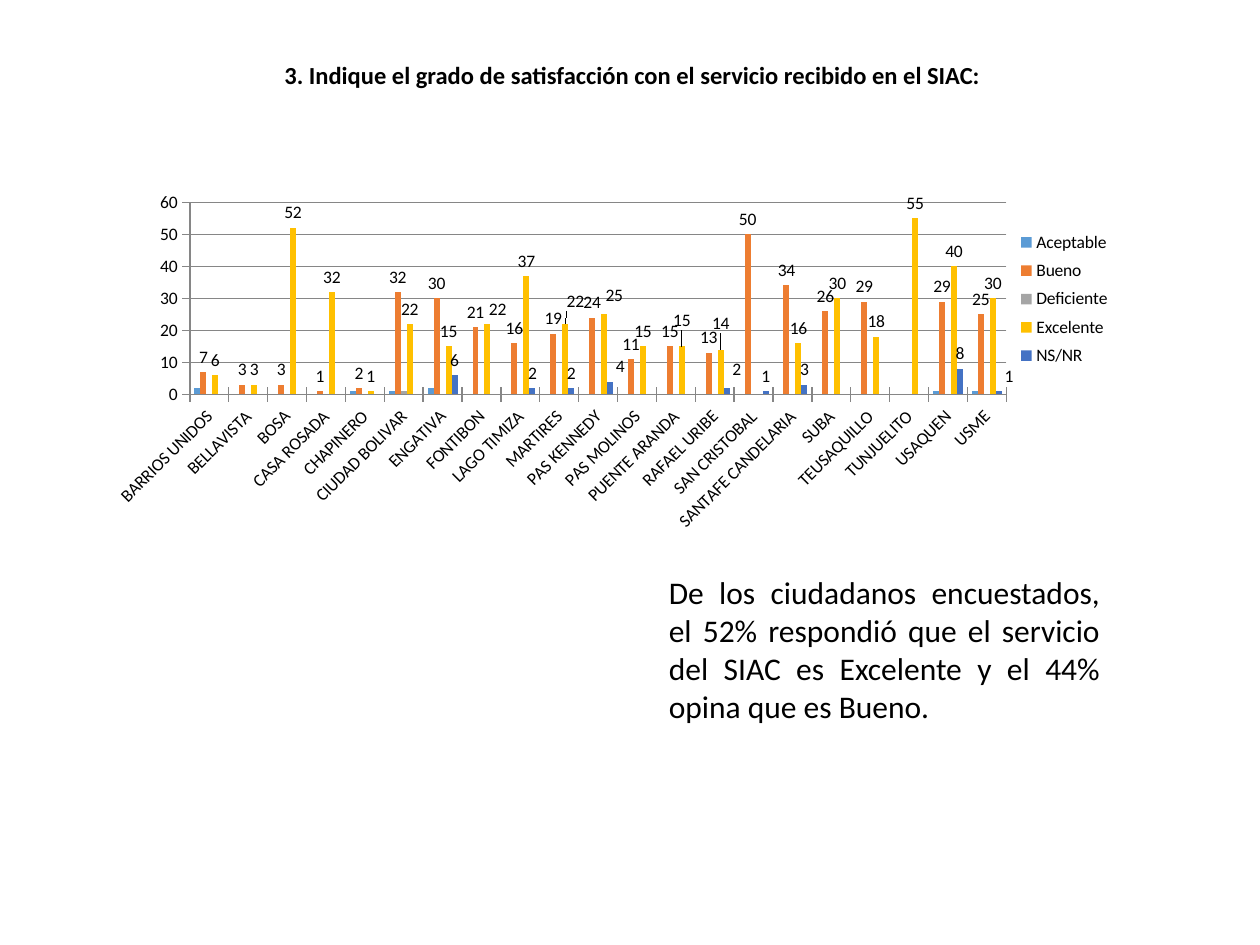
from lxml import etree
from pptx import Presentation
from pptx.chart.data import CategoryChartData
from pptx.dml.color import RGBColor
from pptx.enum.chart import XL_CHART_TYPE, XL_LABEL_POSITION, XL_LEGEND_POSITION, XL_TICK_MARK
from pptx.enum.text import MSO_ANCHOR, MSO_AUTO_SIZE, PP_ALIGN
from pptx.oxml.ns import qn
from pptx.util import Pt

PX = 9144  # 100 px to the inch
COLUMNS = XL_CHART_TYPE.COLUMN_CLUSTERED
OUTSIDE = XL_LABEL_POSITION.OUTSIDE_END
RIGHT = XL_LEGEND_POSITION.RIGHT
CROSS = XL_TICK_MARK.CROSS
COLORS = {
    "text": "000000", "grid": "868686",
    "Aceptable": "5B9BD5", "Bueno": "ED7D31", "Deficiente": "A5A5A5",
    "Excelente": "FFC000", "NS/NR": "4472C4",
}


def format_font(font, size, bold=False):
    for name, value in {"name": "Calibri", "size": Pt(size), "bold": bold}.items():
        setattr(font, name, value)
    font.color.rgb = RGBColor.from_string(COLORS["text"])


def set_layout(parent, index, values):
    for old in parent.findall(qn("c:layout")):
        parent.remove(old)
    layout = etree.Element(qn("c:layout"))
    manual = etree.SubElement(layout, qn("c:manualLayout"))
    for tag, value in values.items():
        etree.SubElement(manual, qn(f"c:{tag}")).set("val", str(value))
    parent.insert(index, layout)


presentation = Presentation()
presentation.slide_width = 1000 * PX
presentation.slide_height = 750 * PX
slide = presentation.slides.add_slide(presentation.slide_layouts[5])

# Title
title = slide.shapes.title
for name, value in {"left": 77, "top": 33, "width": 850, "height": 43}.items():
    setattr(title, name, value * PX)
frame = title.text_frame
frame.text = "3. Indique el grado de satisfacción con el servicio recibido en el SIAC:"
frame.auto_size = MSO_AUTO_SIZE.NONE
frame.vertical_anchor = MSO_ANCHOR.BOTTOM
paragraph = frame.paragraphs[0]
paragraph.alignment = PP_ALIGN.CENTER
paragraph.line_spacing = 0.9
format_font(paragraph.runs[0].font, 14, bold=True)

# Answers by location: one value for each series
series_names = ["Aceptable", "Bueno", "Deficiente", "Excelente", "NS/NR"]
answers = {
    "BARRIOS UNIDOS": (2, 7, None, 6, None),
    "BELLAVISTA": (None, 3, None, 3, None),
    "BOSA": (None, 3, None, 52, None),
    "CASA ROSADA": (None, 1, None, 32, None),
    "CHAPINERO": (1, 2, None, 1, None),
    "CIUDAD BOLIVAR": (1, 32, 1, 22, None),
    "ENGATIVA": (2, 30, None, 15, 6),
    "FONTIBON": (None, 21, None, 22, None),
    "LAGO TIMIZA": (None, 16, None, 37, 2),
    "MARTIRES": (None, 19, None, 22, 2),
    "PAS KENNEDY": (None, 24, None, 25, 4),
    "PAS MOLINOS": (None, 11, None, 15, None),
    "PUENTE ARANDA": (None, 15, None, 15, None),
    "RAFAEL URIBE": (None, 13, None, 14, 2),
    "SAN CRISTOBAL": (None, 50, None, None, 1),
    "SANTAFE CANDELARIA": (None, 34, None, 16, 3),
    "SUBA": (None, 26, None, 30, None),
    "TEUSAQUILLO": (None, 29, None, 18, None),
    "TUNJUELITO": (None, None, None, 55, None),
    "USAQUEN": (1, 29, None, 40, 8),
    "USME": (1, 25, None, 30, 1),
}
chart_data = CategoryChartData()
chart_data.categories = list(answers)
for name, values in zip(series_names, zip(*answers.values())):
    chart_data.add_series(name, values)
chart = slide.shapes.add_chart(
    COLUMNS, 83 * PX, 145 * PX, 806 * PX, 298 * PX, chart_data).chart
chart.has_title = False
format_font(chart.font, 10)
plot = chart.plots[0]
plot.gap_width = 150
plot.overlap = 0
plot.vary_by_categories = False

# Axes
category_axis, value_axis = chart.category_axis, chart.value_axis
value_axis.minimum_scale, value_axis.maximum_scale, value_axis.major_unit = 0, 60, 10
value_axis.has_major_gridlines = True
for axis in (category_axis, value_axis):
    axis.major_tick_mark = CROSS
    format_font(axis.tick_labels.font, 10)
for line in (category_axis.format.line, value_axis.format.line,
             value_axis.major_gridlines.format.line):
    line.color.rgb = RGBColor.from_string(COLORS["grid"])
    line.width = Pt(0.75)
chart_space = category_axis.tick_labels.font and chart.element if hasattr(chart, "element") else chart._chartSpace
category_text = chart_space.find(".//" + qn("c:catAx") + "/" + qn("c:txPr"))
category_text.find(qn("a:bodyPr")).set("rot", "-2700000")

# Legend and plot area
chart.has_legend = True
chart.legend.position = RIGHT
chart.legend.include_in_layout = False
format_font(chart.legend.font, 10)
edges = {"xMode": "edge", "yMode": "edge"}
set_layout(chart_space.find(".//" + qn("c:plotArea")), 0,
           {"layoutTarget": "inner", **edges, "x": 0.084, "y": 0.052, "w": 0.804, "h": 0.512})
set_layout(chart_space.find(".//" + qn("c:legend")), 1,
           {**edges, "x": 0.89, "y": 0.11, "w": 0.11, "h": 0.4})

# Series colours and value labels; some labels are nudged off their bars
nudges = {
    "Excelente": {7: (0.01, 0), 9: (0.01, -0.02), 10: (0.01, -0.01),
                  12: (0, -0.03), 13: (0, -0.03)},
    "NS/NR": {10: (0.01, 0), 13: (0.01, -0.01), 20: (0.01, 0)},
}
for series in plot.series:
    series.format.fill.solid()
    series.format.fill.fore_color.rgb = RGBColor.from_string(COLORS[series.name])
    series.invert_if_negative = False
    if series.name not in ("Bueno", "Excelente", "NS/NR"):
        continue
    labels = series.data_labels
    labels.show_value = True
    labels.position = OUTSIDE
    format_font(labels.font, 10)
    moves = nudges.get(series.name, {})
    for index in moves:
        label = series.points[index].data_label
        label.position = OUTSIDE
        format_font(label.font, 10)
    for element in chart_space.findall(".//" + qn("c:ser"))[series.index].iter(qn("c:dLbl")):
        x, y = moves[int(element.find(qn("c:idx")).get("val"))]
        set_layout(element, 1, {"x": x, "y": y})

# Conclusion
conclusion = slide.shapes.add_textbox(521 * PX, 450 * PX, 362 * PX, 131 * PX)
frame = conclusion.text_frame
frame.word_wrap = True
frame.auto_size = MSO_AUTO_SIZE.SHAPE_TO_FIT_TEXT
frame.text = ("De los ciudadanos encuestados, el 52% respondió que el servicio "
              "del SIAC es Excelente y el 44% opina que es Bueno.")
paragraph = frame.paragraphs[0]
paragraph.alignment = PP_ALIGN.JUSTIFY
format_font(paragraph.runs[0].font, 18)

presentation.save("out.pptx")
